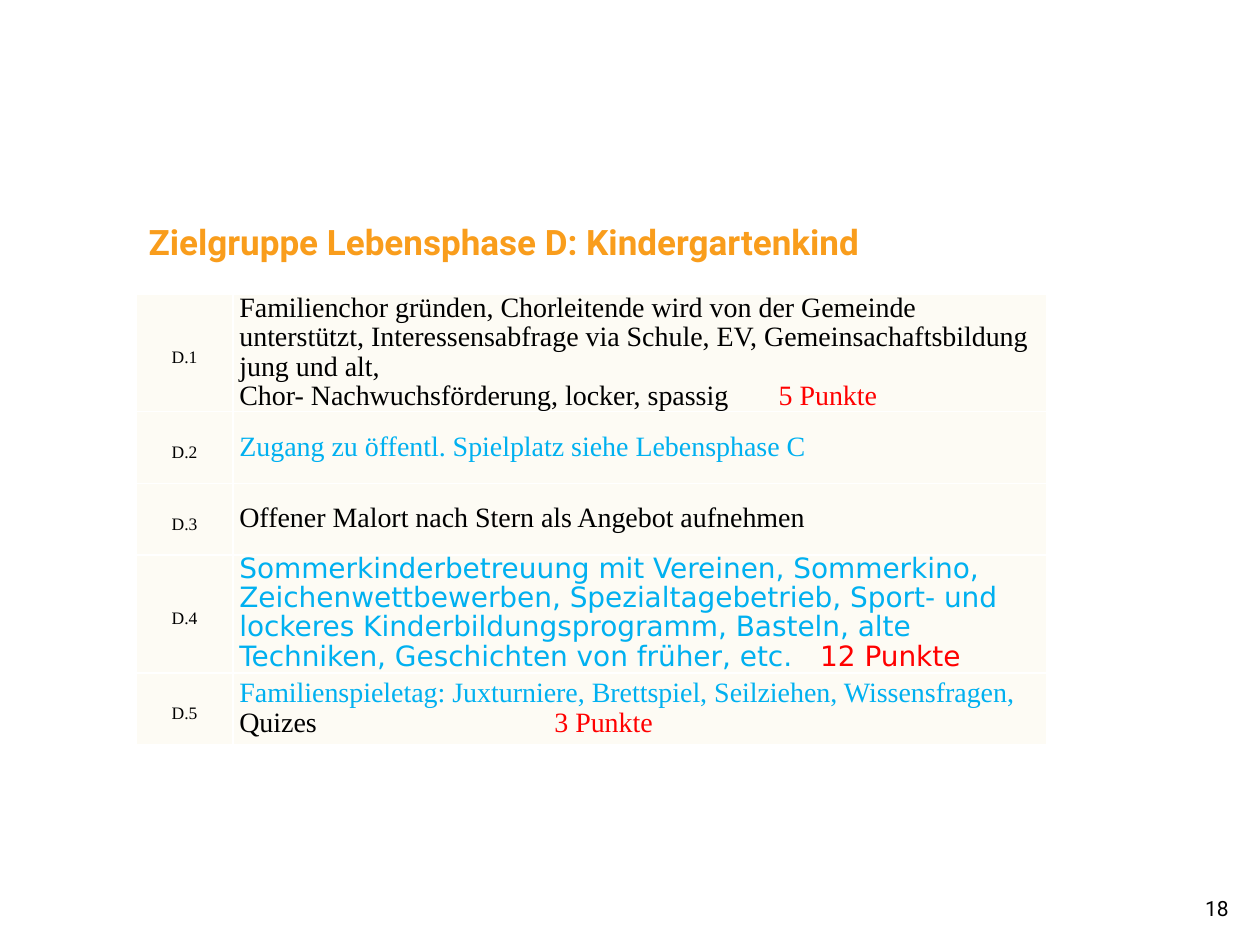
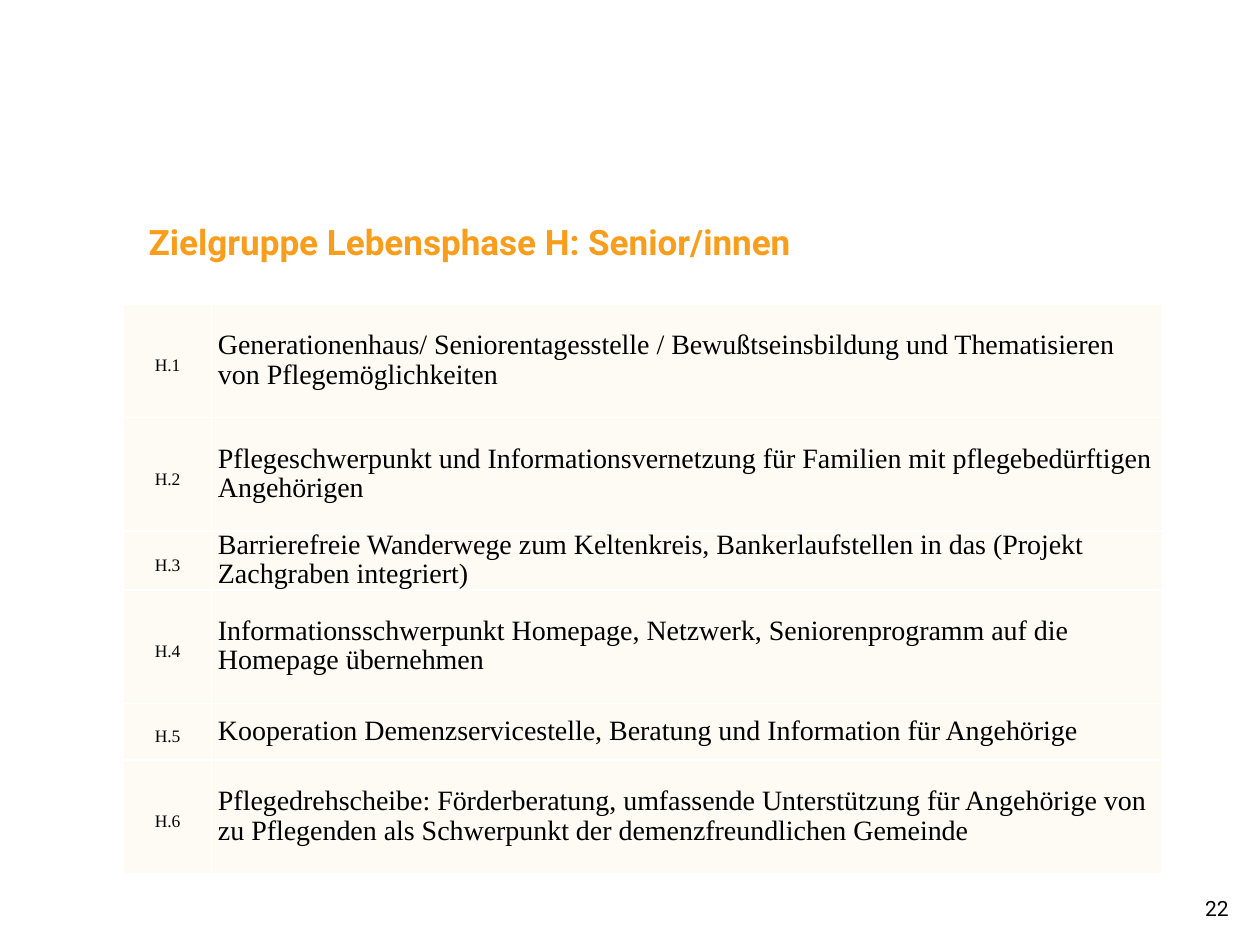
from lxml import etree
from pptx import Presentation
from pptx import util as u
from pptx.dml.color import RGBColor
from pptx.enum import text
from pptx.oxml import ns

COLORS = {"title": "F99D1C", "ink": "000000", "idea": "00B0F0",
          "points": "FF0000", "cell": "FDFBF4", "border": "FFFFFF"}
SERIF, SANS, HEADING = "Times New Roman", "DejaVu Sans", "Roboto"

deck = Presentation()
deck.slide_width, deck.slide_height = u.Inches(10), u.Inches(7.5)
COLUMN, ROW = deck.slide_width / 100, deck.slide_height / 100


def style(span, font, size, color, bold=False):
    span.font.name = font
    span.font.size = u.Pt(size)
    span.font.bold = bold
    span.font.color.rgb = RGBColor.from_string(COLORS[color])


def add_border(cell):
    properties = cell._tc.get_or_add_tcPr()
    for index, side in enumerate(("lnL", "lnR", "lnT", "lnB")):
        line = etree.Element(ns.qn(f"a:{side}"), w=str(u.Pt(1)))
        fill = etree.SubElement(line, ns.qn("a:solidFill"))
        etree.SubElement(fill, ns.qn("a:srgbClr"), val=COLORS["border"])
        properties.insert(index, line)


pages = [
    {
        "number": "18",
        "title": "Zielgruppe Lebensphase D: Kindergartenkind",
        "phase": "D", "left": 10.8, "top": 31.1, "columns": (7.7, 64.6),
        "ideas": [
            (7.6, SERIF, 4.28, [
                ("Familienchor gründen, Chorleitende wird von der Gemeinde unterstützt, "
                 "Interessensabfrage via Schule, EV, Gemeinsachaftsbildung jung und alt, ", "ink"),
                ("\nChor- Nachwuchsförderung, locker, spassig\t", "ink"),
                ("5 Punkte", "points")]),
            (7.6, SERIF, None, [("Zugang zu öffentl. Spielplatz siehe Lebensphase C", "idea")]),
            (7.6, SERIF, None, [("Offener Malort nach Stern als Angebot aufnehmen", "ink")]),
            (7.6, SANS, 4.61, [
                ("Sommerkinderbetreuung mit Vereinen, Sommerkino, Zeichenwettbewerben, "
                 "Spezialtagebetrieb, Sport- und lockeres Kinderbildungsprogramm, Basteln, "
                 "alte Techniken, Geschichten von früher, etc.\t", "idea"),
                ("12 Punkte", "points")]),
            (7.6, SERIF, 2.5, [
                ("Familienspieletag: Juxturniere, Brettspiel, Seilziehen, Wissensfragen, ", "idea"),
                ("Quizes\t", "ink"),
                ("3 Punkte", "points")]),
        ],
    },
    {
        "number": "22",
        "title": "Zielgruppe Lebensphase H: Senior/innen",
        "phase": "H", "left": 9.8, "top": 32.2, "columns": (7, 75.5),
        "ideas": [
            (12, SERIF, None, [("Generationenhaus/ Seniorentagesstelle / Bewußtseinsbildung "
                                "und Thematisieren von Pflegemöglichkeiten", "ink")]),
            (12, SERIF, None, [("Pflegeschwerpunkt und Informationsvernetzung für Familien "
                                "mit pflegebedürftigen Angehörigen", "ink")]),
            (6, SERIF, None, [("Barrierefreie Wanderwege zum Keltenkreis, Bankerlaufstellen "
                               "in das (Projekt Zachgraben integriert)", "ink")]),
            (12, SERIF, None, [("Informationsschwerpunkt Homepage, Netzwerk, Seniorenprogramm "
                                "auf die Homepage übernehmen", "ink")]),
            (6, SERIF, None, [("Kooperation Demenzservicestelle, Beratung und Information "
                               "für Angehörige", "ink")]),
            (12, SERIF, None, [("Pflegedrehscheibe: Förderberatung, umfassende Unterstützung "
                                "für Angehörige von zu Pflegenden als Schwerpunkt der "
                                "demenzfreundlichen Gemeinde", "ink")]),
        ],
    },
]

for content in pages:
    page = deck.slides.add_slide(deck.slide_layouts[5])

    title = page.shapes.title
    title.left, title.top = int(10.8 * COLUMN), int(21 * ROW)
    title.width, title.height = int(65.8 * COLUMN), int(9 * ROW)
    title.text_frame.text = content["title"]
    title.text_frame.auto_size = text.MSO_AUTO_SIZE.NONE
    title.text_frame.vertical_anchor = text.MSO_ANCHOR.MIDDLE
    para = title.text_frame.paragraphs[0]
    para.alignment = text.PP_ALIGN.LEFT
    style(para.runs[0], HEADING, 20, "title", bold=True)

    number = page.shapes.add_textbox(int(90.2 * COLUMN), int(94.1 * ROW),
                                     int(8.3 * COLUMN), int(4 * ROW))
    number.text_frame.word_wrap = True
    number.text_frame.text = content["number"]
    para = number.text_frame.paragraphs[0]
    para.alignment = text.PP_ALIGN.RIGHT
    style(para.runs[0], HEADING, 12, "ink")

    ideas = content["ideas"]
    table = page.shapes.add_table(
        len(ideas), 2, int(content["left"] * COLUMN), int(content["top"] * ROW),
        int(sum(content["columns"]) * COLUMN),
        int(sum(idea[0] for idea in ideas) * ROW)).table
    table.first_row = table.horz_banding = False
    for column, width in zip(table.columns, content["columns"]):
        column.width = int(width * COLUMN)

    for index, (height, font, tab, spans) in enumerate(ideas):
        table.rows[index].height = int(height * ROW)
        label, body = table.rows[index].cells
        for cell in (label, body):
            cell.margin_left = cell.margin_right = u.Inches(0.05)
            cell.margin_top = cell.margin_bottom = 0
            cell.vertical_anchor = text.MSO_ANCHOR.MIDDLE
            cell.fill.solid()
            cell.fill.fore_color.rgb = RGBColor.from_string(COLORS["cell"])
            add_border(cell)
            cell.text_frame.paragraphs[0].line_spacing = u.Pt(16.8)

        para = label.text_frame.paragraphs[0]
        para.text = f"{content['phase']}.{index + 1}"
        para.alignment = text.PP_ALIGN.CENTER
        style(para.runs[0], SERIF, 10, "ink")

        para = body.text_frame.paragraphs[0]
        if tab:
            stops = etree.SubElement(para._p.get_or_add_pPr(), ns.qn("a:tabLst"))
            etree.SubElement(stops, ns.qn("a:tab"), pos=str(u.Inches(tab)), algn="l")
        for words, color in spans:
            if words.startswith("\n"):
                para.add_line_break()
            span = para.add_run()
            span.text = words.lstrip("\n")
            style(span, font, 16, color)

deck.save("out.pptx")
